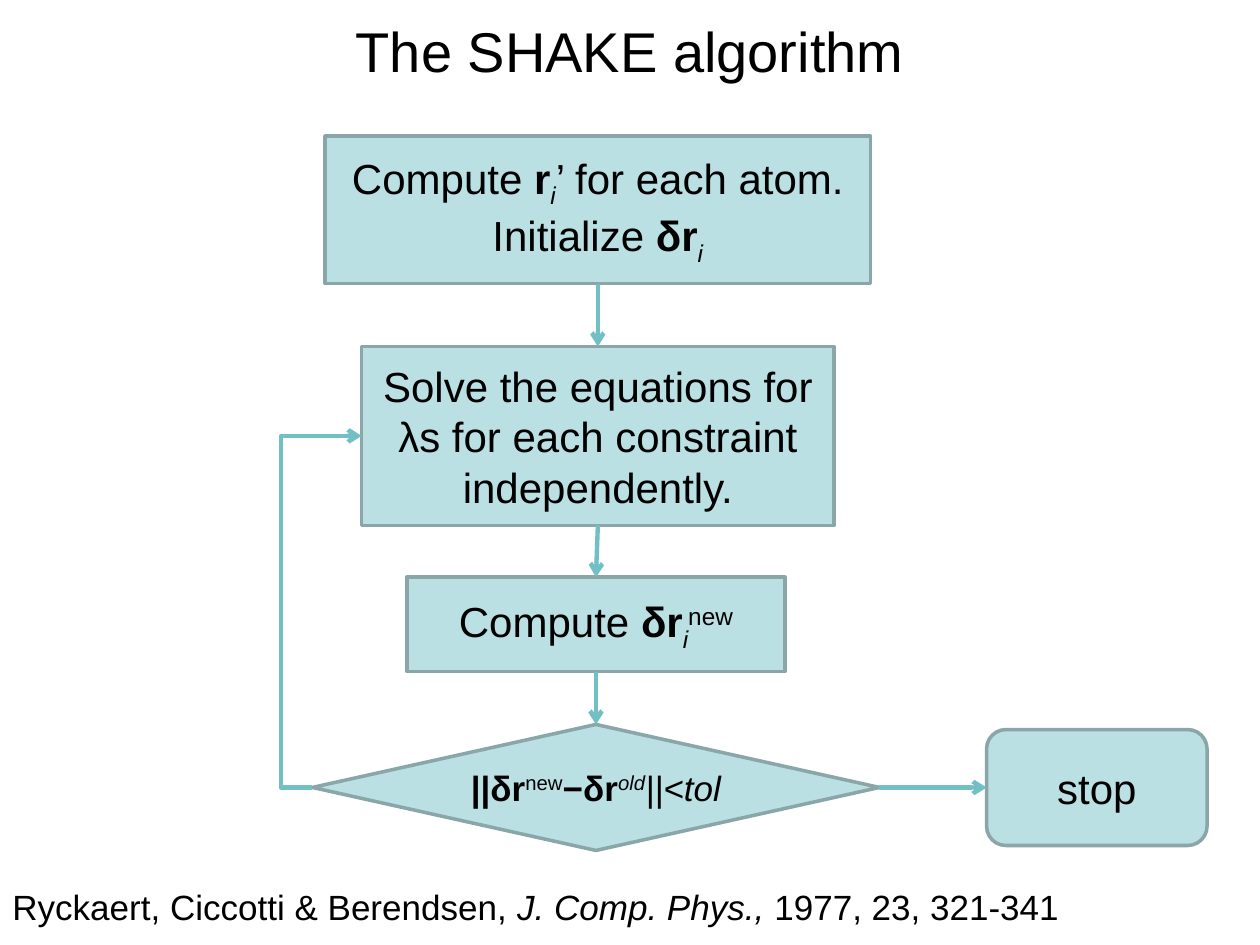
"""Build a flowchart slide of the SHAKE algorithm."""
from lxml import etree
from pptx import Presentation
from pptx import util as u
from pptx.dml.color import RGBColor
from pptx.enum import shapes, text
from pptx.oxml.ns import qn

COLORS = {"text": "000000", "fill": "BBE0E3", "border": "8AA6A8", "arrow": "72BFC5"}
BASELINES = {"sub": "-25000", "sup": "30000"}


def color(name):
    return RGBColor.from_string(COLORS[name])


def write(frame, runs, size, align):
    frame.word_wrap = True
    paragraph = frame.paragraphs[0]
    paragraph.alignment = align
    for words, *styles in runs:
        run = paragraph.add_run()
        run.text = words
        run.font.name = "Arial"
        run.font.size = u.Pt(size)
        run.font.color.rgb = color("text")
        run.font.bold = "bold" in styles
        run.font.italic = "italic" in styles
        for style in styles:
            if style in BASELINES:
                run.font._element.set("baseline", BASELINES[style])


prs = Presentation()
prs.slide_width, prs.slide_height = u.Inches(10), u.Inches(7.5)
slide = prs.slides.add_slide(prs.slide_layouts[5])

title = slide.shapes.title
title.left, title.top = u.Inches(0.25), u.Inches(0.08)
title.width, title.height = u.Inches(9.5), u.Inches(0.64)
title.text_frame.vertical_anchor = text.MSO_ANCHOR.TOP
title.text_frame.auto_size = text.MSO_AUTO_SIZE.SHAPE_TO_FIT_TEXT
write(title.text_frame, [("The SHAKE algorithm",)], 32, text.PP_ALIGN.CENTER)

PROCESS = shapes.MSO_SHAPE.FLOWCHART_PROCESS
DECISION = shapes.MSO_SHAPE.FLOWCHART_DECISION
TERMINAL = shapes.MSO_SHAPE.FLOWCHART_ALTERNATE_PROCESS
steps = [
    ("initialize", PROCESS, (2.58, 1.08, 4.33, 1.17), 24,
     [("Compute ",), ("r", "bold"), ("i", "italic", "sub"),
      ("’ for each atom. Initialize ",), ("δr", "bold"), ("i", "italic", "sub")]),
    ("solve", PROCESS, (2.87, 2.75, 3.75, 1.42), 24,
     [("Solve the equations for λs for each constraint independently.",)]),
    ("update", PROCESS, (3.23, 4.58, 3, 0.75), 24,
     [("Compute ",), ("δr", "bold"), ("i", "italic", "sub"), ("new", "sup")]),
    ("converged", DECISION, (2.48, 5.75, 4.5, 1), 20,
     [("||δr", "bold"), ("new", "sup"), ("−δr", "bold"),
      ("old", "italic", "sup"), ("||<tol", "italic")]),
    ("stop", TERMINAL, (7.83, 5.79, 1.75, 0.92), 24, [("stop",)]),
]
nodes = {}
for name, kind, box, size, runs in steps:
    node = slide.shapes.add_shape(kind, *map(u.Inches, box))
    node.shadow.inherit = False
    node.fill.solid()
    node.fill.fore_color.rgb = color("fill")
    node.line.color.rgb = color("border")
    node.line.width = u.Pt(2)
    node.text_frame.vertical_anchor = text.MSO_ANCHOR.MIDDLE
    write(node.text_frame, runs, size, text.PP_ALIGN.CENTER)
    nodes[name] = node

TOP, LEFT, BOTTOM, RIGHT = range(4)
STRAIGHT, ELBOW = shapes.MSO_CONNECTOR.STRAIGHT, shapes.MSO_CONNECTOR.ELBOW
flows = [
    (STRAIGHT, "initialize", BOTTOM, "solve", TOP),
    (STRAIGHT, "solve", BOTTOM, "update", TOP),
    (STRAIGHT, "update", BOTTOM, "converged", TOP),
    (STRAIGHT, "converged", RIGHT, "stop", LEFT),
    (ELBOW, "converged", LEFT, "solve", LEFT),
]
for kind, source, exit_side, target, entry_side in flows:
    arrow = slide.shapes.add_connector(kind, 0, 0, 0, 0)
    arrow.begin_connect(nodes[source], exit_side)
    arrow.end_connect(nodes[target], entry_side)
    arrow.line.color.rgb = color("arrow")
    arrow.line.width = u.Pt(2.5)
    properties = arrow._element.spPr
    etree.SubElement(properties.find(qn("a:ln")), qn("a:tailEnd"), type="arrow")
    etree.SubElement(properties, qn("a:effectLst"))
    if kind == ELBOW:
        bend = round(-u.Inches(0.25) / arrow.width * 100000)
        guides = properties.find(qn("a:prstGeom")).get_or_add_avLst()
        etree.SubElement(guides, qn("a:gd"), name="adj1", fmla=f"val {bend}")

citation = slide.shapes.add_textbox(u.Inches(0), u.Inches(6.98), u.Inches(10), u.Inches(0.44))
citation.text_frame.auto_size = text.MSO_AUTO_SIZE.SHAPE_TO_FIT_TEXT
write(citation.text_frame,
      [("Ryckaert, Ciccotti & Berendsen, ",), ("J. Comp. Phys., ", "italic"),
       ("1977, 23, 321-341",)], 20, text.PP_ALIGN.LEFT)

prs.save("out.pptx")
